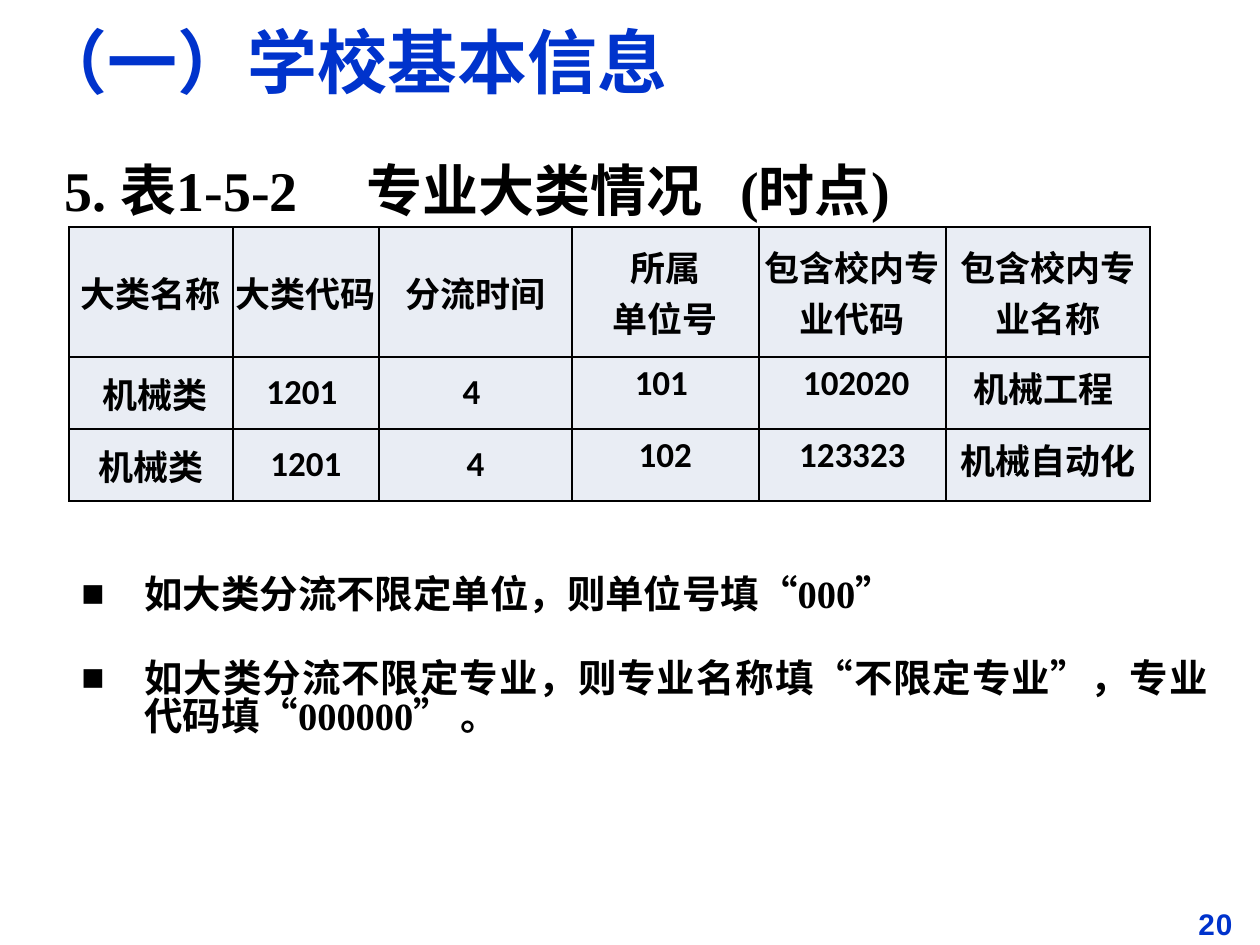
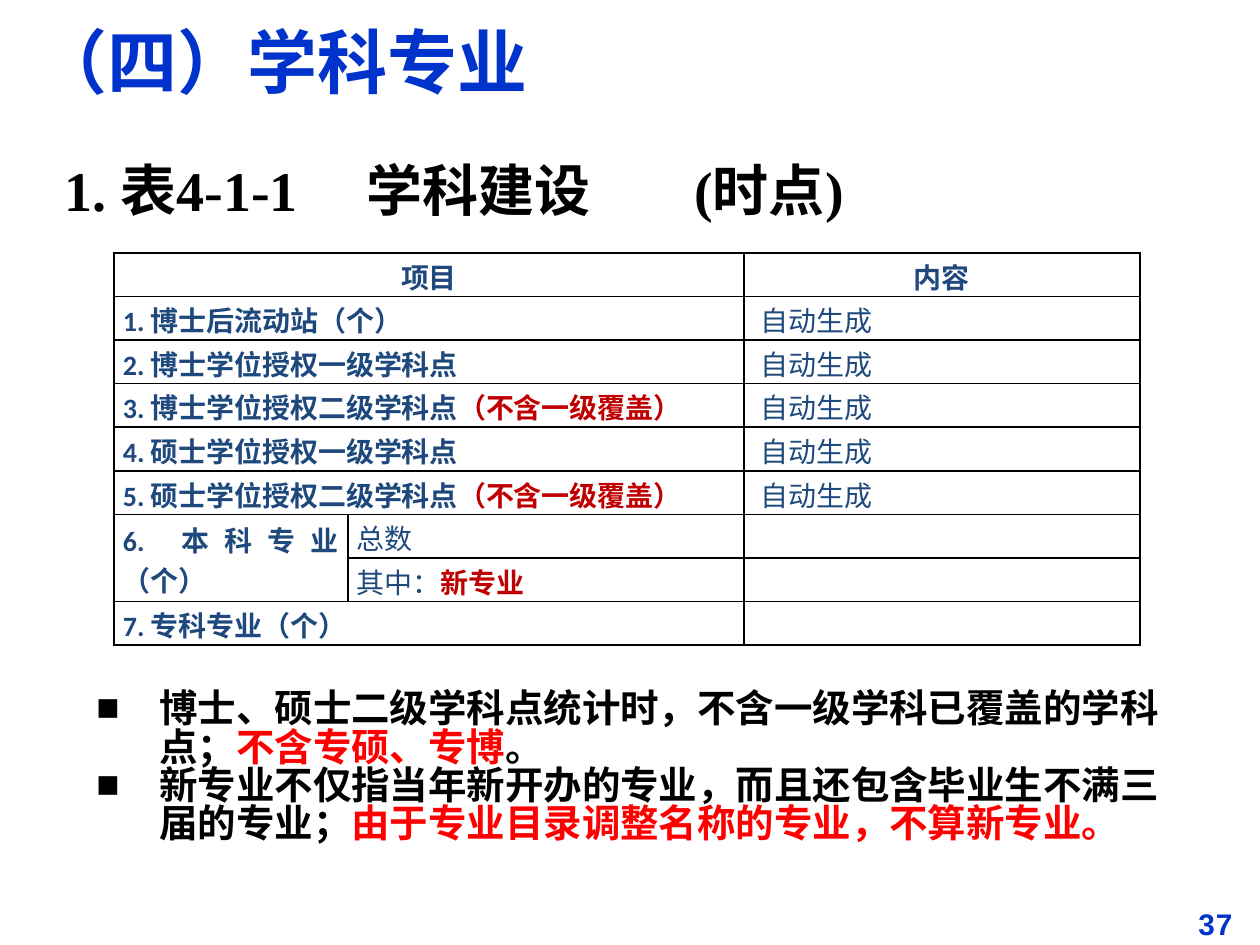
"""Two slides on school data forms: a title, a form heading, a table and notes."""
import pptx
import pptx.dml.color
import pptx.enum.text
import pptx.oxml
import pptx.oxml.ns
import pptx.util

COLORS = {"blue": "0033CC", "black": "000000", "navy": "1F497D", "dark_red": "C00000",
          "red": "FF0000", "pale": "E9EDF4", "white": "FFFFFF"}
EMU_PER_PX = 914400 // 126
CJK_FONT = "Noto Sans CJK SC"
TIGHT = 0.83
NAMESPACE = pptx.oxml.ns.nsdecls("a")
ALIGN = pptx.enum.text.PP_ALIGN
ANCHOR = pptx.enum.text.MSO_ANCHOR

TITLE_BOX = (25, 16, 1032, 90)
HEADING_BOX = (52, 161, 1200, 81)
NUMBER_BOX = (1186, 900, 74, 49)

MAJOR_ROWS = [
    ["大类名称", "大类代码", "分流时间", "所属\n单位号", "包含校内专业代码", "包含校内专业名称"],
    [" 机械类", "1201 ", "4 ", "101 ", " 102020", "机械工程 "],
    ["机械类", "1201", "4", "102", "123323", "机械自动化"],
]
MAJOR_NOTES = [
    [("如大类分流不限定单位，则单位号填“000”", "black")],
    [("如大类分流不限定专业，则专业名称填“不限定专业”，专业代码填“000000” 。", "black")],
]
AUTO = "自动生成"
NO_OVERLAP = ("（不含一级覆盖）", "dark_red", True)
DISCIPLINE_ROWS = [
    ([("项目", "navy", True)], [], "内容"),
    ([("1. 博士后流动站（个）", "navy", True)], [], AUTO),
    ([("2. 博士学位授权一级学科点", "navy", True)], [], AUTO),
    ([("3. 博士学位授权二级学科点", "navy", True), NO_OVERLAP], [], AUTO),
    ([("4. 硕士学位授权一级学科点", "navy", True)], [], AUTO),
    ([("5. 硕士学位授权二级学科点", "navy", True), NO_OVERLAP], [], AUTO),
    ([("6. 本科专业（个）", "navy", True)], [("总数", "navy", False)], ""),
    ([], [("其中：", "navy", False), ("新专业", "dark_red", True)], ""),
    ([("7. 专科专业（个）", "navy", True)], [], ""),
]
DISCIPLINE_NOTES = [
    [("博士、硕士二级学科点统计时，不含一级学科已覆盖的学科点；", "black"),
     ("不含专硕、专博", "red"), ("。", "black")],
    [("新专业不仅指当年新开办的专业，而且还包含毕业生不满三届的专业；", "black"),
     ("由于专业目录调整名称的专业，不算新专业。", "red")],
]


def px(length):
    """Turn pixels into EMU."""
    return pptx.util.Emu(round(length * EMU_PER_PX))


def rgb(name):
    """Look up a named colour."""
    return pptx.dml.color.RGBColor.from_string(COLORS[name])


def style_run(run, size, color, font="Times New Roman", bold=True):
    """Give a run its size, colour and Latin and Chinese fonts."""
    run.font.size = pptx.util.Pt(size)
    run.font.bold = bold
    run.font.name = font
    run.font.color.rgb = rgb(color)
    run._r.get_or_add_rPr().append(
        pptx.oxml.parse_xml(f'<a:ea {NAMESPACE} typeface="{CJK_FONT}"/>'))


def add_box(page, place, text=""):
    """Add a wrapping text box."""
    box = page.shapes.add_textbox(*map(px, place))
    box.text_frame.word_wrap = True
    box.text_frame.text = text
    return box


def add_title(page, text):
    """Move and format the title placeholder."""
    title = page.shapes.title
    title.left, title.top, title.width, title.height = map(px, TITLE_BOX)
    frame = title.text_frame
    frame.text = text
    frame.vertical_anchor = ANCHOR.MIDDLE
    frame.paragraphs[0].alignment = ALIGN.LEFT
    style_run(frame.paragraphs[0].runs[0], 40, "blue")


def add_heading(page, text, stops):
    """Add the form heading with its tab stops."""
    para = add_box(page, HEADING_BOX, text).text_frame.paragraphs[0]
    tabs = "".join(f'<a:tab pos="{px(stop)}" algn="l"/>' for stop in stops)
    para._p.get_or_add_pPr().append(
        pptx.oxml.parse_xml(f"<a:tabLst {NAMESPACE}>{tabs}</a:tabLst>"))
    para.line_spacing = TIGHT
    for run in para.runs:
        style_run(run, 32, "black")


def add_page_number(page, number):
    """Add the page number in the bottom right corner."""
    run = add_box(page, NUMBER_BOX, number).text_frame.paragraphs[0].runs[0]
    style_run(run, 17, "blue", "Arial")
    run._r.get_or_add_rPr().set("spc", "50")


def add_notes(page, place, notes, gap=0, align=ALIGN.LEFT):
    """Add square-bulleted notes, each a list of coloured spans."""
    frame = add_box(page, place).text_frame
    frame.vertical_anchor = ANCHOR.MIDDLE
    frame.margin_top = frame.margin_bottom = px(1)
    for index, spans in enumerate(notes):
        para = frame.add_paragraph() if index else frame.paragraphs[0]
        properties = para._p.get_or_add_pPr()
        properties.set("marL", str(px(63)))
        properties.set("indent", str(px(-63)))
        for bullet in ('buFont {} typeface="Arial"', 'buChar {} char="■"'):
            properties.append(pptx.oxml.parse_xml(f"<a:{bullet.format(NAMESPACE)}/>"))
        para.alignment = align
        para.line_spacing = TIGHT
        if index:
            para.space_before = pptx.util.Pt(gap)
        for text, color in spans:
            run = para.add_run()
            run.text = text
            style_run(run, 22, color)


def add_grid(page, left, top, widths, heights):
    """Add a plain table with the given column widths and row heights."""
    frame = page.shapes.add_table(len(heights), len(widths), px(left), px(top),
                                  px(sum(widths)), px(sum(heights)))
    table = frame.table
    table.first_row = table.horz_banding = False
    for column, width in zip(table.columns, widths):
        column.width = px(width)
    for row, height in zip(table.rows, heights):
        row.height = px(height)
    return table


def style_cell(cell, fill, margins, top=1, bottom=1):
    """Give a cell its borders, fill and margins."""
    properties = cell._tc.get_or_add_tcPr()
    for index, (side, width) in enumerate(zip("LRTB", (1, 1, top, bottom))):
        properties.insert(index, pptx.oxml.parse_xml(
            f'<a:ln{side} {NAMESPACE} w="{pptx.util.Pt(width)}"><a:solidFill>'
            f'<a:srgbClr val="{COLORS["black"]}"/></a:solidFill></a:ln{side}>'))
    cell.fill.solid()
    cell.fill.fore_color.rgb = rgb(fill)
    cell.margin_left, cell.margin_top, cell.margin_right, cell.margin_bottom = map(px, margins)


def fill_cell(cell, spans, align):
    """Write coloured spans into a cell."""
    para = cell.text_frame.paragraphs[0]
    para.alignment = align
    for text, color, bold in spans:
        run = para.add_run()
        run.text = text
        style_run(run, 16, color, "Calibri", bold)
    if not spans:
        para.font.size = pptx.util.Pt(16)


def add_major_table(page, left, top):
    """Add the table of major categories."""
    table = add_grid(page, left, top, [164, 146, 193, 187, 187, 204], [130, 72, 72])
    for row, texts in enumerate(MAJOR_ROWS):
        for column, text in enumerate(texts):
            cell = table.cell(row, column)
            style_cell(cell, "pale", (2, 5, 2, 5))
            cell.text_frame.text = text
            middle = row == 0 or column < 3
            cell.vertical_anchor = ANCHOR.MIDDLE if middle else ANCHOR.TOP
            for para in cell.text_frame.paragraphs:
                para.alignment = ALIGN.CENTER
                style_run(para.runs[0], 20, "black", "Calibri")


def add_discipline_table(page, left, top, height):
    """Add the table of disciplines with its merged label cells."""
    count = len(DISCIPLINE_ROWS)
    table = add_grid(page, left, top, [234, 396, 396], [height / count] * count)
    for row, (label, detail, content) in enumerate(DISCIPLINE_ROWS):
        align = ALIGN.JUSTIFY if row else ALIGN.CENTER
        content_spans = [(content, "navy", row == 0)] if content else []
        for column, spans in enumerate((label, detail, content_spans)):
            cell = table.cell(row, column)
            indent = 17 if column == 2 and row else 9
            style_cell(cell, "white", (indent, 3, 9, 0),
                       1 if row else 1.5, 1.5 if row == count - 1 else 1)
            fill_cell(cell, spans, align)
        if label and not detail:
            table.cell(row, 0).merge(table.cell(row, 1))
        elif not label:
            table.cell(row - 1, 0).merge(table.cell(row, 0))
            table.cell(row - 1, 0).vertical_anchor = ANCHOR.MIDDLE


def add_page(deck, title, heading, stops, number):
    """Add a title-only slide with the parts all slides share."""
    page = deck.slides.add_slide(deck.slide_layouts[5])
    add_page_number(page, number)
    add_title(page, title)
    add_heading(page, heading, stops)
    return page


def main():
    """Build and save the deck."""
    deck = pptx.Presentation()
    deck.slide_width, deck.slide_height = px(1260), px(945)

    page = add_page(deck, "（一）学校基本信息", "5. 表1-5-2\t专业大类情况\t(时点)", (302, 676), "20")
    add_notes(page, (69, 564, 1152, 188), MAJOR_NOTES, 26, ALIGN.JUSTIFY)
    add_major_table(page, 69, 227)

    page = add_page(deck, "（四）学科专业", "1. 表4-1-1\t学科建设\t(时点)", (302, 630), "37")
    add_notes(page, (84, 674, 1111, 190), DISCIPLINE_NOTES)
    add_discipline_table(page, 114, 253, 392)

    deck.save("out.pptx")


if __name__ == "__main__":
    main()
